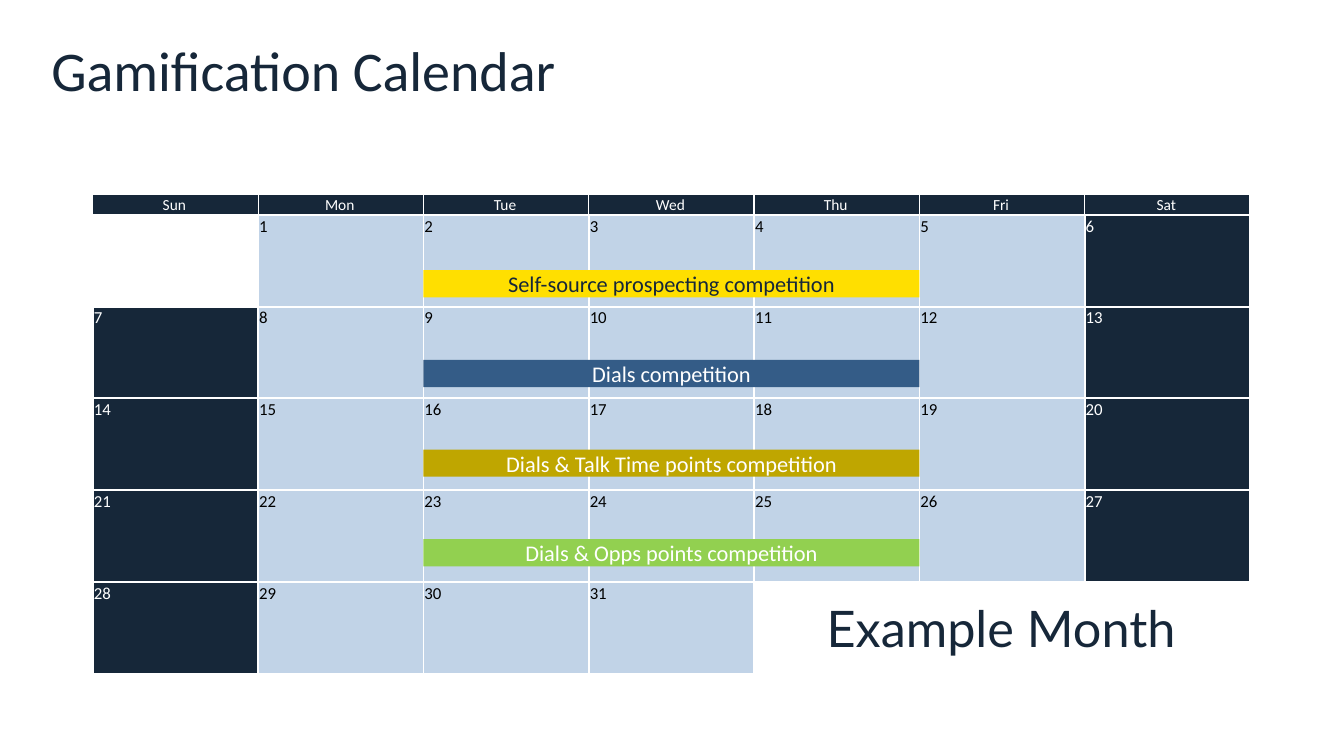
from dataclasses import dataclass

from lxml import etree
from pptx import Presentation
from pptx.dml.color import RGBColor
from pptx.enum.shapes import MSO_SHAPE
from pptx.enum.text import MSO_ANCHOR, PP_ALIGN
from pptx.oxml.ns import qn
from pptx.slide import Slide
from pptx.table import Table, _Cell
from pptx.text.text import _Paragraph
from pptx.util import Inches, Pt

CENTER, LEFT = PP_ALIGN.CENTER, PP_ALIGN.LEFT
MIDDLE, BOTTOM, TOP = MSO_ANCHOR.MIDDLE, MSO_ANCHOR.BOTTOM, MSO_ANCHOR.TOP
RECTANGLE = MSO_SHAPE.RECTANGLE

NAVY = RGBColor(0x16, 0x27, 0x39)
PALE_BLUE = RGBColor(0xC1, 0xD3, 0xE7)
WHITE = RGBColor(0xFF, 0xFF, 0xFF)
BLACK = RGBColor(0x00, 0x00, 0x00)
YELLOW = RGBColor(0xFF, 0xDF, 0x00)
BLUE = RGBColor(0x34, 0x5C, 0x87)
OCHRE = RGBColor(0xBF, 0xA6, 0x00)
GREEN = RGBColor(0x92, 0xD0, 0x50)

WEEKDAYS = ("Sun", "Mon", "Tue", "Wed", "Thu", "Fri", "Sat")
WEEKS, LAST_DAY = 5, 31
CALENDAR_LEFT, CALENDAR_TOP = 0.92, 1.93
DAY_WIDTH, HEADER_HEIGHT, WEEK_HEIGHT = 1.64, 0.2, 0.91
BAR_TOP, BAR_STEP = 2.68, 0.89


@dataclass(frozen=True)
class Competition:
    label: str
    fill: RGBColor
    ink: RGBColor = WHITE


COMPETITIONS = (
    Competition("Self-source prospecting competition", YELLOW, NAVY),
    Competition("Dials competition", BLUE),
    Competition("Dials & Talk Time points competition", OCHRE),
    Competition("Dials & Opps points competition", GREEN),
)


def style(paragraph: _Paragraph, size: float, color: RGBColor,
          align: PP_ALIGN = CENTER, font: str = "Calibri") -> None:
    paragraph.alignment = align
    paragraph.font.name = font
    paragraph.font.size = Pt(size)
    paragraph.font.color.rgb = color


def add_borders(cell: _Cell, header: bool) -> None:
    properties = cell._tc.get_or_add_tcPr()
    for side in ("L", "R", "T", "B"):
        width = 1 if header and side != "B" else 1.5
        line = etree.SubElement(properties, qn(f"a:ln{side}"), w=str(Pt(width)))
        fill = etree.SubElement(line, qn("a:solidFill"))
        etree.SubElement(fill, qn("a:srgbClr"), val=str(WHITE))


def format_cell(cell: _Cell, fill: RGBColor, anchor: MSO_ANCHOR = TOP,
                header: bool = False) -> None:
    add_borders(cell, header)
    cell.fill.solid()
    cell.fill.fore_color.rgb = fill
    cell.vertical_anchor = anchor
    cell.margin_left, cell.margin_right = Inches(0.01), Inches(0.03)
    cell.margin_top = cell.margin_bottom = 0
    cell.text_frame.paragraphs[0].line_spacing = 1.07


def fill_header(table: Table) -> None:
    for column, weekday in enumerate(WEEKDAYS):
        cell = table.cell(0, column)
        cell.text = weekday
        format_cell(cell, NAVY, BOTTOM, header=True)
        heading = cell.text_frame.paragraphs[0]
        heading.space_before = Pt(1)
        style(heading, 11, WHITE)


def fill_days(table: Table) -> None:
    for week in range(WEEKS):
        for column in range(len(WEEKDAYS)):
            cell = table.cell(week + 1, column)
            day = week * len(WEEKDAYS) + column
            if not 1 <= day <= LAST_DAY:
                format_cell(cell, WHITE, MIDDLE if day else TOP)
                continue
            weekend = column in (0, len(WEEKDAYS) - 1)
            cell.text = str(day)
            format_cell(cell, NAVY if weekend else PALE_BLUE)
            style(cell.text_frame.paragraphs[0], 12, WHITE if weekend else BLACK, LEFT)


def add_calendar(slide: Slide) -> None:
    table = slide.shapes.add_table(
        WEEKS + 1, len(WEEKDAYS), Inches(CALENDAR_LEFT), Inches(CALENDAR_TOP),
        Inches(DAY_WIDTH * len(WEEKDAYS)),
        Inches(HEADER_HEIGHT + WEEK_HEIGHT * WEEKS)).table
    table.first_row = table.horz_banding = False
    for column in table.columns:
        column.width = Inches(DAY_WIDTH)
    for index, row in enumerate(table.rows):
        row.height = Inches(WEEK_HEIGHT if index else HEADER_HEIGHT)
    fill_header(table)
    fill_days(table)

    # Month name in the free days after the last date
    month = table.cell(WEEKS, 4)
    month.merge(table.cell(WEEKS, 6))
    month.text = "Example Month"
    style(month.text_frame.paragraphs[0], 36, NAVY, font="Lato")


def add_competition(slide: Slide, week: int, competition: Competition) -> None:
    bar = slide.shapes.add_shape(
        RECTANGLE, Inches(CALENDAR_LEFT + 2 * DAY_WIDTH),
        Inches(BAR_TOP + week * BAR_STEP), Inches(3 * DAY_WIDTH), Inches(0.27))
    bar.shadow.inherit = False
    bar.fill.solid()
    bar.fill.fore_color.rgb = competition.fill
    bar.line.fill.background()
    bar.text_frame.word_wrap = True
    bar.text_frame.vertical_anchor = MIDDLE
    label = bar.text_frame.paragraphs[0]
    label.text = competition.label
    style(label, 16, competition.ink)


def main() -> None:
    presentation = Presentation()
    presentation.slide_width, presentation.slide_height = Inches(13.33), Inches(7.5)
    slide = presentation.slides.add_slide(presentation.slide_layouts[5])

    # Title
    title = slide.shapes.title
    title.left, title.top = Inches(0.41), Inches(0.03)
    title.width, title.height = Inches(12.51), Inches(1.39)
    title.text_frame.vertical_anchor = MIDDLE
    heading = title.text_frame.paragraphs[0]
    heading.text = "Gamification Calendar"
    heading.line_spacing = 0.9
    style(heading, 40, NAVY, LEFT)

    # Calendar and weekly competitions
    add_calendar(slide)
    for week, competition in enumerate(COMPETITIONS):
        add_competition(slide, week, competition)

    presentation.save("out.pptx")


if __name__ == "__main__":
    main()
